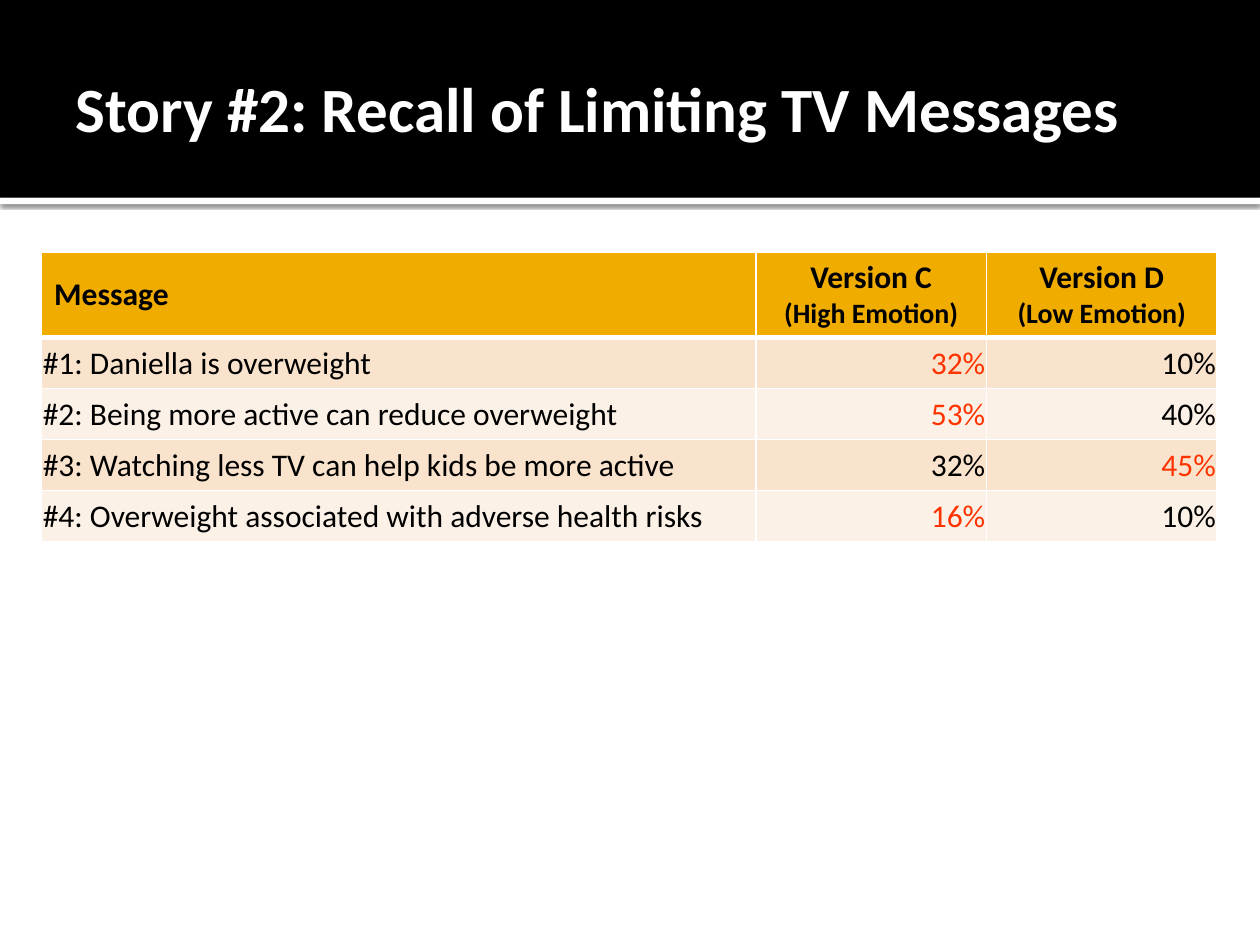
from lxml.etree import SubElement
from pptx import Presentation
from pptx.dml.color import RGBColor
from pptx.enum.shapes import MSO_SHAPE as Shape
from pptx.enum.text import MSO_ANCHOR as Anchor, MSO_AUTO_SIZE as AutoSize, PP_ALIGN as Align
from pptx.oxml.ns import qn
from pptx.util import Inches, Pt

COLORS = {"band": "000000", "white": "FFFFFF", "text": "000000", "higher": "FF3300",
          "header": "F0AD00", "odd": "F9E3CC", "even": "FCF1E7"}
FONT = "Calibri"
TITLE = "Story #2: Recall of Limiting TV Messages"
HEADINGS = [["Message"], ["Version C", "(High Emotion)"], ["Version D", "(Low Emotion)"]]
RECALL = [
    ("#1: Daniella is overweight", 32, 10),
    ("#2: Being more active can reduce overweight", 53, 40),
    ("#3: Watching less TV can help kids be more active", 32, 45),
    ("#4: Overweight associated with adverse health risks", 16, 10),
]
COLUMN_WIDTHS = [5.67, 1.83, 1.83]
HEADER_HEIGHT, ROW_HEIGHT = 0.67, 0.405
HEADER_MARGINS = {"margin_left": 0.1, "margin_right": 0.1, "margin_top": 0.05, "margin_bottom": 0.05}
BODY_MARGINS = {"margin_left": 0.01, "margin_right": 0.01, "margin_top": 0.01, "margin_bottom": 0}


def rgb(name):
    """Return the named colour."""
    return RGBColor.from_string(COLORS[name])


def set_margins(target, margins):
    """Apply margins in inches to a cell or text frame."""
    for side, length in margins.items():
        setattr(target, side, Inches(length))


def write_line(paragraph, text, size, color="text", bold=False, align=Align.LEFT):
    """Write one formatted run into a paragraph."""
    paragraph.alignment = align
    run = paragraph.add_run()
    run.text = text
    for attribute, value in {"name": FONT, "size": Pt(size), "bold": bold}.items():
        setattr(run.font, attribute, value)
    run.font.color.rgb = rgb(color)


def add_bar(slide, left, top, width, height, color):
    """Add a plain rectangle and return it."""
    bar = slide.shapes.add_shape(Shape.RECTANGLE, *map(Inches, (left, top, width, height)))
    bar.shadow.inherit = False
    bar.fill.solid()
    bar.fill.fore_color.rgb = rgb(color)
    bar.line.fill.background()
    return bar


def add_shadow(bar):
    """Give a bar a soft shadow falling downwards."""
    effects = bar._element.spPr.find(qn("a:effectLst"))
    shadow = SubElement(effects, qn("a:outerShdw"), blurRad=str(Pt(2.5)), dist=str(Pt(0.8)),
                        dir="5400000", algn="tl", rotWithShape="0")
    tint = SubElement(shadow, qn("a:srgbClr"), val=COLORS["band"])
    SubElement(tint, qn("a:alpha"), val="60000")


def add_title_band(slide, left, top, width, height):
    """Build the black title band with its shadowed white rule."""
    add_shadow(add_bar(slide, left, top + height, width, 0.05, "white"))
    add_bar(slide, left, top, width, height, "band")
    title = slide.shapes.title
    slide.shapes._spTree.append(title._element)
    place = {"left": left + 0.5, "top": top + 0.17, "width": width - 0.75, "height": height - 0.2}
    for attribute, length in place.items():
        setattr(title, attribute, Inches(length))
    frame = title.text_frame
    frame.auto_size = AutoSize.NONE
    frame.vertical_anchor = Anchor.MIDDLE
    set_margins(frame, HEADER_MARGINS | {"margin_right": 0.05})
    write_line(frame.paragraphs[0], TITLE, 36, "white", True)


def style_cell(cell, fill, margins, top=1, bottom=1):
    """Set borders, fill, margins and anchor of a table cell."""
    properties = cell._tc.get_or_add_tcPr()
    for side, width in {"L": 1, "R": 1, "T": top, "B": bottom}.items():
        border = SubElement(properties, qn(f"a:ln{side}"), w=str(Pt(width)))
        solid = SubElement(border, qn("a:solidFill"))
        SubElement(solid, qn("a:srgbClr"), val=COLORS["white"])
    cell.fill.solid()
    cell.fill.fore_color.rgb = rgb(fill)
    cell.vertical_anchor = Anchor.MIDDLE
    set_margins(cell, margins)


def add_recall_table(slide, left, top):
    """Build the recall table, marking the higher share of each row."""
    height = HEADER_HEIGHT + ROW_HEIGHT * len(RECALL)
    box = map(Inches, (left, top, sum(COLUMN_WIDTHS), height))
    table = slide.shapes.add_table(len(RECALL) + 1, len(HEADINGS), *box).table
    for column, width in zip(table.columns, COLUMN_WIDTHS):
        column.width = Inches(width)
    for index, row in enumerate(table.rows):
        row.height = Inches(ROW_HEIGHT if index else HEADER_HEIGHT)

    for index, (heading, *details) in enumerate(HEADINGS):
        cell = table.cell(0, index)
        style_cell(cell, "header", HEADER_MARGINS, bottom=3)
        align = Align.CENTER if index else Align.LEFT
        write_line(cell.text_frame.paragraphs[0], heading, 18, bold=True, align=align)
        for detail in details:
            write_line(cell.text_frame.add_paragraph(), detail, 16, bold=True, align=align)

    for index, (message, *shares) in enumerate(RECALL, 1):
        cells = table.rows[index].cells
        for cell in cells:
            style_cell(cell, "odd" if index % 2 else "even", BODY_MARGINS, top=3 if index == 1 else 1)
        message_cell, *share_cells = cells
        write_line(message_cell.text_frame.paragraphs[0], message, 18)
        for cell, share in zip(share_cells, shares):
            color = "higher" if share == max(shares) else "text"
            write_line(cell.text_frame.paragraphs[0], f"{share}%", 18, color, align=Align.RIGHT)


def main():
    """Build and save the slide."""
    deck = Presentation()
    deck.slide_width, deck.slide_height = Inches(10), Inches(7.5)
    slide = deck.slides.add_slide(deck.slide_layouts[5])
    add_title_band(slide, 0, 0, 10, 1.57)
    add_recall_table(slide, 0.33, 2)
    deck.save("out.pptx")


if __name__ == "__main__":
    main()
